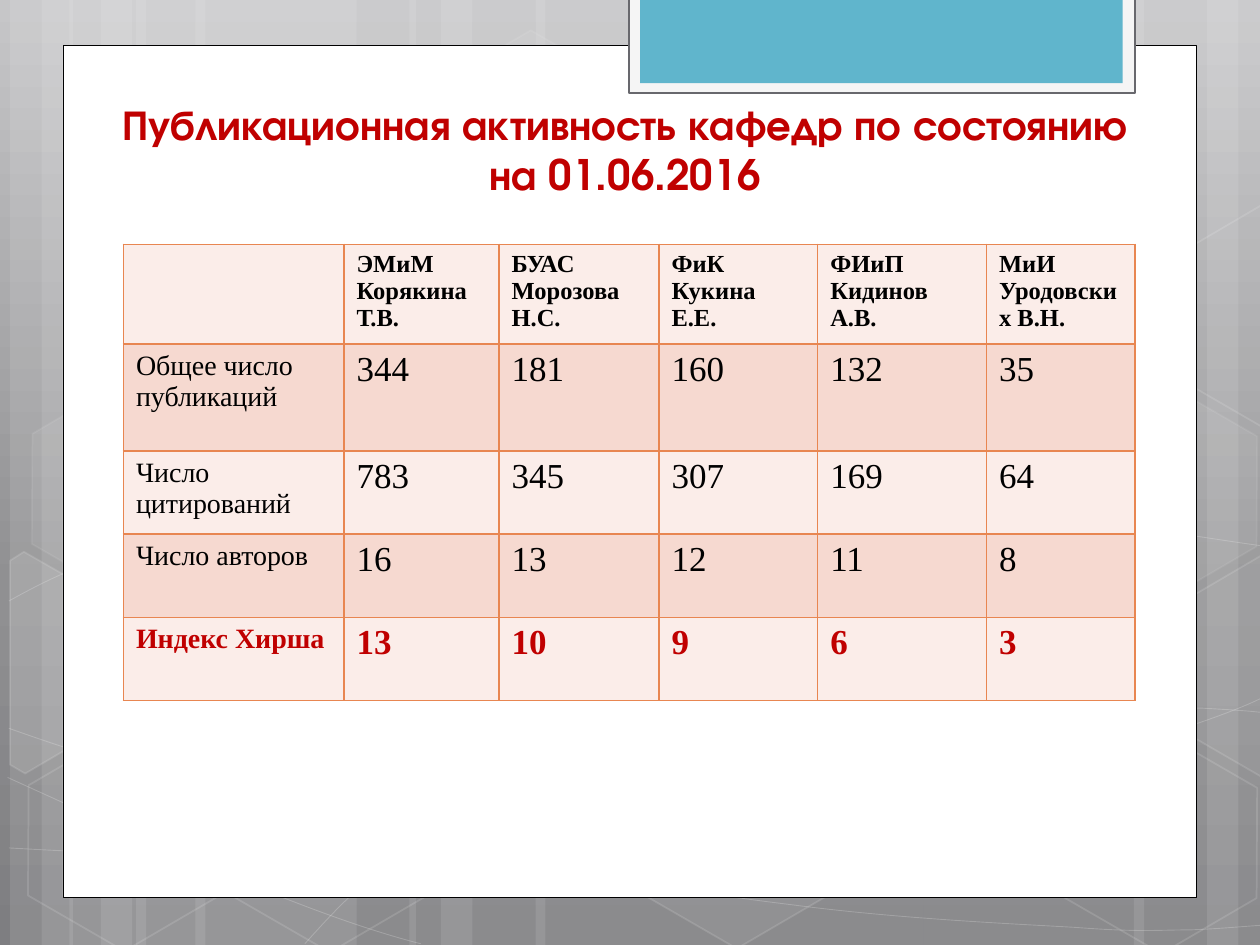
from pptx import Presentation
from pptx.dml.color import RGBColor
from pptx.enum.shapes import MSO_SHAPE
from pptx.enum.text import MSO_ANCHOR, MSO_AUTO_SIZE, PP_ALIGN
from pptx.oxml import parse_xml
from pptx.oxml.ns import nsdecls, qn
from pptx.util import Inches, Pt
from lxml.etree import SubElement

WIDE, HIGH = 10, 7.5
WHITE = RGBColor(0xFF, 0xFF, 0xFF)
BLACK = RGBColor(0, 0, 0)
RED = RGBColor(0xC0, 0, 0)
BLUE = RGBColor(0x60, 0xB5, 0xCC)
PALE = RGBColor(0xF5, 0xF5, 0xF5)
GREY = RGBColor(0x68, 0x68, 0x6D)
EDGE = RGBColor(0xE8, 0x86, 0x51)
BANDS = RGBColor(0xFB, 0xED, 0xE9), RGBColor(0xF6, 0xD9, 0xD0)
SKY = (0, "C6C6C8"), (62, "909092"), (100, "7E7E81")

# Backdrop: stripes as (left, width)
STRIPES = [(1.08, 1.75), (0.08, 0.5), (0.33, 0.83), (1.55, 1.75),
           (0.55, 0.5), (0.8, 0.83), (7.33, 1.75), (9.58, 0.5),
           (9, 0.83), (4.25, 3.08), (3.25, 0.5), (3.5, 0.83)]
# Each wave is a start point, then Bezier control points in threes
WAVES = [
    [(0.07, 6.73), (0.61, 6.76), (1.15, 6.79), (1.9, 6.78),
     (2.65, 6.77), (3.58, 6.75), (4.58, 6.65),
     (5.58, 6.55), (7, 6.36), (7.92, 6.17),
     (8.83, 5.98), (9.77, 5.68), (10.07, 5.51)],
    [(0.07, 4.77), (0.36, 4.61), (0.65, 4.46), (1.21, 4.31),
     (1.78, 4.16), (2.59, 3.94), (3.47, 3.87),
     (4.36, 3.8), (5.44, 3.79), (6.54, 3.87),
     (7.64, 3.95), (9.47, 4.26), (10.07, 4.34)],
    [(0.06, 6.17), (1.27, 6.72), (2.47, 7.27), (3.34, 7.49)],
    [(0.07, 5.78), (0.38, 5.89), (0.7, 6), (1.28, 6.16),
     (1.86, 6.31), (2.73, 6.56), (3.57, 6.73),
     (4.4, 6.9), (5.45, 7.08), (6.28, 7.18),
     (7.11, 7.29), (8, 7.33), (8.53, 7.36),
     (9.05, 7.4), (9.19, 7.38), (9.45, 7.38),
     (9.71, 7.37), (9.89, 7.35), (10.07, 7.34)],
    [(2.42, 7.49), (2.6, 7.29), (2.78, 7.09), (3.02, 6.91),
     (3.26, 6.73), (3.6, 6.53), (3.88, 6.39),
     (4.16, 6.25), (4.33, 6.19), (4.7, 6.09),
     (5.06, 5.99), (5.73, 5.85), (6.08, 5.78),
     (6.44, 5.71), (6.49, 5.71), (6.8, 5.69),
     (7.11, 5.66), (7.6, 5.63), (7.94, 5.62),
     (8.29, 5.61), (8.86, 5.62), (8.86, 5.62),
     (9.08, 5.62), (9.31, 5.62), (9.53, 5.62),
     (9.71, 5.63), (9.88, 5.64), (9.97, 5.65),
     (10.06, 5.66), (10.03, 5.65), (10.06, 5.66)],
]
# Hexagons as (left, top, fill opacity, line opacity)
CELLS = [(3.34, 0.36, 4, 8), (4.97, 5.89, 6, 12), (0.11, 5.91, 0, 12),
         (0.14, 3.12, 7, 8), (1.74, 5.92, 0, 12), (7.53, 4.53, 10, 12),
         (8.34, 5.93, 0, 12), (8.34, 3.14, 7, 8)]
# Hexagons cut by the slide's edge as (points, fill opacity)
CUTS = [
    ([(0.08, 4.45), (0.19, 4.38), (0.96, 4.82), (0.95, 5.7),
      (0.2, 6.14), (0.08, 6.07)], 10),
    ([(9.26, 4.85), (10.01, 4.41), (10.09, 4.46), (10.09, 6.13),
      (10.02, 6.17), (9.26, 5.73)], 4),
    ([(9.26, 2.07), (10.01, 1.63), (10.1, 1.68), (10.09, 3.35),
      (10.02, 3.39), (9.26, 2.95)], 0),
]

# Table content
COLS = [1.75, 1.23, 1.27, 1.26, 1.34, 1.18]
ROWS = [0.79, 0.85, 0.66, 0.66, 0.66]
DATA = [
    ["", "ЭМиМ\nКорякина Т.В.", "БУАС\nМорозова Н.С.", "ФиК\nКукина Е.Е.",
     "ФИиП\nКидинов А.В.", "МиИ\nУродовских В.Н."],
    ["Общее число публикаций", "344", "181", "160", "132", "35"],
    ["Число цитирований", "783", "345", "307", "169", "64"],
    ["Число авторов", "16", "13", "12", "11", "8"],
    ["Индекс Хирша", "13", "10", "9", "6", "3"],
]


def write(frame, text, size=14, font="Times New Roman", color=BLACK,
          bold=False, align=PP_ALIGN.LEFT):
    frame.text = text
    for para in frame.paragraphs:
        para.alignment = align
        for run in para.runs:
            face = run.font
            face.size, face.name, face.bold = Pt(size), font, bold
            face.color.rgb = color


def paint(shape, fill=None, line=None, width=1, solid=100, ink=100):
    """Set fill and line; solid and ink are their opacities in percent."""
    shape.shadow.inherit = False
    for part, color in ((shape.fill, fill), (shape.line.fill, line)):
        if color is None:
            part.background()
        else:
            part.solid()
            part.fore_color.rgb = color
    if line is not None:
        shape.line.width = Pt(width)
    props = shape.element.spPr
    for way, share in (("a:solidFill", solid), ("a:ln/a:solidFill", ink)):
        steps = [qn(tag) for tag in (way + "/a:srgbClr").split("/")]
        tint = props.find("/".join(steps))
        if tint is not None and share < 100:
            SubElement(tint, qn("a:alpha"), val=str(share * 1000))


def block(slide, kind, left, top, wide, high, **look):
    shape = slide.shapes.add_shape(kind, *map(Inches, (left, top, wide, high)))
    paint(shape, **look)
    return shape


def outline(slide, points, close, **look):
    spots = [(Inches(x), Inches(y)) for x, y in points]
    pen = slide.shapes.build_freeform(*spots[0])
    pen.add_line_segments(spots[1:], close=close)
    shape = pen.convert_to_shape()
    paint(shape, line=WHITE, **look)
    return shape


def bend(shape):
    """Join each three straight steps into one Bezier curve."""
    track = next(shape.element.iter(qn("a:path")))
    steps = track.findall(qn("a:lnTo"))
    for i in range(0, len(steps), 3):
        arc = SubElement(track, qn("a:cubicBezTo"))
        for step in steps[i:i + 3]:
            arc.append(step[0])
            track.remove(step)


def backdrop(slide):
    stops = "".join(f'<a:gs pos="{pos * 1000}"><a:srgbClr val="{tone}"/></a:gs>'
                    for pos, tone in SKY)
    slide.element.find(qn("p:cSld")).insert(0, parse_xml(
        f'<p:bg {nsdecls("p", "a")}><p:bgPr><a:gradFill><a:gsLst>{stops}'
        '</a:gsLst><a:lin ang="5400000" scaled="0"/></a:gradFill>'
        '<a:effectLst/></p:bgPr></p:bg>'))
    for left, wide in STRIPES:
        block(slide, MSO_SHAPE.RECTANGLE, left, 0, wide, HIGH,
              fill=WHITE, solid=10)
    for knots in WAVES:
        bend(outline(slide, knots, False, width=0.5, ink=20))
    for left, top, solid, ink in CELLS:
        cell = block(slide, MSO_SHAPE.HEXAGON, left, top, 1.75, 1.52,
                     fill=WHITE if solid else None, solid=solid,
                     line=WHITE, ink=ink)
        cell.adjustments[0] = 0.285
        cell.rotation = 30
    for points, solid in CUTS:
        outline(slide, points, True, fill=WHITE if solid else None,
                solid=solid, ink=12)


def panel(slide):
    box = MSO_SHAPE.RECTANGLE
    block(slide, box, 0.5, 0.36, 9, 6.76, fill=WHITE, line=BLACK, width=0.5)
    block(slide, box, 4.99, -0.02, 4.02, 0.76, fill=PALE, line=GREY, width=1.25)
    block(slide, box, 5.08, -0.02, 3.83, 0.68, fill=BLUE)


def heading(slide, text):
    title = slide.shapes.title
    title.left, title.top = Inches(0.67), Inches(0.76)
    title.width, title.height = Inches(8.58), Inches(0.87)
    frame = title.text_frame
    frame.word_wrap, frame.auto_size = True, MSO_AUTO_SIZE.NONE
    frame.vertical_anchor = MSO_ANCHOR.BOTTOM
    write(frame, text, size=24, font="TeX Gyre Adventor", color=RED,
          bold=True, align=PP_ALIGN.CENTER)
    # Bring the title in front of the panel
    title.element.getparent().append(title.element)


def border(cell):
    props = cell._tc.get_or_add_tcPr()
    for spot, side in enumerate(("lnL", "lnR", "lnT", "lnB")):
        props.insert(spot, parse_xml(
            f'<a:{side} {nsdecls("a")} w="{Pt(1)}"><a:solidFill>'
            f'<a:srgbClr val="{EDGE}"/></a:solidFill></a:{side}>'))


def grid(slide):
    table = slide.shapes.add_table(
        len(ROWS), len(COLS), Inches(0.98), Inches(1.94),
        Inches(sum(COLS)), Inches(sum(ROWS))).table
    for col, wide in zip(table.columns, COLS):
        col.width = Inches(wide)
    for r, (high, texts) in enumerate(zip(ROWS, DATA)):
        table.rows[r].height = Inches(high)
        last = r == len(ROWS) - 1
        for c, text in enumerate(texts):
            cell = table.cell(r, c)
            cell.fill.solid()
            cell.fill.fore_color.rgb = BANDS[r % 2]
            border(cell)
            write(cell.text_frame, text, bold=r == 0 or last,
                  size=14 if r == 0 else 20 if c else 16,
                  color=RED if last else BLACK)


def main():
    deck = Presentation()
    deck.slide_width, deck.slide_height = Inches(WIDE), Inches(HIGH)
    slide = deck.slides.add_slide(deck.slide_layouts[5])
    backdrop(slide)
    panel(slide)
    heading(slide, "Публикационная активность кафедр по состоянию на 01.06.2016")
    grid(slide)
    deck.save("out.pptx")


if __name__ == "__main__":
    main()
